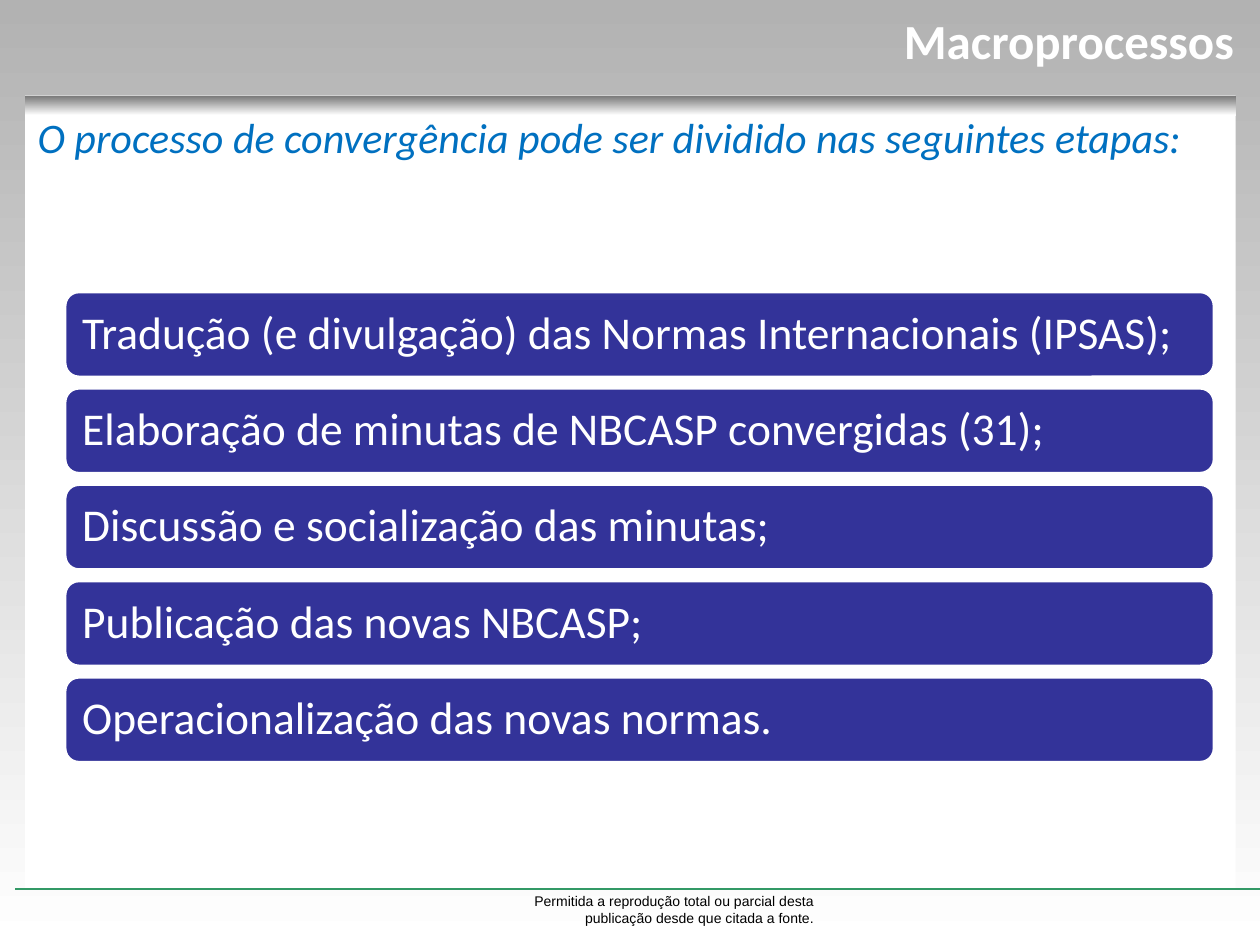
from lxml import etree
from pptx import Presentation
from pptx.dml.color import RGBColor
from pptx.enum.shapes import MSO_CONNECTOR, MSO_SHAPE
from pptx.enum.text import MSO_ANCHOR, MSO_AUTO_SIZE, PP_ALIGN
from pptx.oxml.ns import qn
from pptx.util import Pt

RECT, ROUNDED = MSO_SHAPE.RECTANGLE, MSO_SHAPE.ROUNDED_RECTANGLE
LEFT, RIGHT = PP_ALIGN.LEFT, PP_ALIGN.RIGHT
TOP, MIDDLE = MSO_ANCHOR.TOP, MSO_ANCHOR.MIDDLE

TITLE = "Macroprocessos"
LEAD = "O processo de convergência pode ser dividido nas seguintes etapas:"
STEPS = [
    "Tradução (e divulgação) das Normas Internacionais (IPSAS);",
    "Elaboração de minutas de NBCASP convergidas (31);",
    "Discussão e socialização das minutas;",
    "Publicação das novas NBCASP;",
    "Operacionalização das novas normas.",
]
FOOTER = "Permitida a reprodução total ou parcial desta publicação desde que citada a fonte."

COLORS = {
    "white": "FFFFFF", "black": "000000", "backdrop": "B2B2B2", "shade": "767676",
    "rule": "339966", "lead": "0070C0", "step": "333399",
}
SLIDE_W, SLIDE_H = 720, 540
PANEL_X, PANEL_Y, PANEL_W = 14.4, 54.6, 691.7
RULE_Y = 508
STEP_X, STEP_Y, STEP_W, STEP_H, STEP_PITCH = 37, 166.6, 657, 49, 55.05


def rgb(name):
    return RGBColor.from_string(COLORS[name])


def points(*lengths):
    return [Pt(length) for length in lengths]


def add_block(slide, kind, box, fill, fade_to=None):
    """Add a borderless shape, solid or fading downwards to a second colour."""
    block = slide.shapes.add_shape(kind, *points(*box))
    block.shadow.inherit = False
    block.line.fill.background()
    if fade_to:
        block.fill.gradient()
        block.fill.gradient_angle = 270
        for stop, color in zip(block.fill.gradient_stops, (fill, fade_to)):
            stop.color.rgb = rgb(color)
    else:
        block.fill.solid()
        block.fill.fore_color.rgb = rgb(fill)
    return block


def write(holder, text, size, color, font="Calibri", bold=False, italic=False,
          align=LEFT, anchor=TOP, spacing=1.0, after=0, margin_x=7.2, margin_y=3.6):
    frame = holder.text_frame
    frame.word_wrap = True
    frame.auto_size = MSO_AUTO_SIZE.NONE
    frame.vertical_anchor = anchor
    frame.margin_left = frame.margin_right = Pt(margin_x)
    frame.margin_top = frame.margin_bottom = Pt(margin_y)
    frame.text = text
    paragraph = frame.paragraphs[0]
    paragraph.alignment = align
    paragraph.line_spacing = spacing
    paragraph.space_before, paragraph.space_after = Pt(0), Pt(after)
    style = paragraph.font
    style.name, style.size, style.bold, style.italic = font, Pt(size), bold, italic
    style.color.rgb = rgb(color)


def add_backdrop(slide):
    add_block(slide, RECT, (0, 0, SLIDE_W, SLIDE_H), "backdrop", "white")
    add_block(slide, RECT, (PANEL_X, PANEL_Y, PANEL_W, RULE_Y - PANEL_Y), "white")
    add_block(slide, RECT, (PANEL_X, PANEL_Y, PANEL_W, 11.3), "shade", "white")
    rule = slide.shapes.add_connector(
        MSO_CONNECTOR.STRAIGHT, *points(8.6, RULE_Y, SLIDE_W, RULE_Y))
    rule.line.color.rgb = rgb("rule")
    rule.line.width = Pt(0.75)
    etree.SubElement(rule._element.spPr, qn("a:effectLst"))


def main():
    deck = Presentation()
    deck.slide_width, deck.slide_height = points(SLIDE_W, SLIDE_H)
    slide = deck.slides.add_slide(deck.slide_layouts[5])
    add_backdrop(slide)

    footer = slide.shapes.add_textbox(*points(298, 506.4, 174.4, 26.7))
    write(footer, FOOTER, 8, "black", font="Arial", align=RIGHT)
    lead = slide.shapes.add_textbox(*points(PANEL_X, PANEL_Y, PANEL_W, 42.5))
    write(lead, LEAD, 24, "lead", italic=True, spacing=1.2, after=6)

    title = slide.shapes.title
    title.left, title.top, title.width, title.height = points(47.5, 0, 664, 45.4)
    write(title, TITLE, 28, "white", bold=True, align=RIGHT, anchor=MIDDLE,
          margin_x=6.5, margin_y=2.9)
    slide.shapes._spTree.append(title._element)  # bring in front of the backdrop

    for row, text in enumerate(STEPS):
        step = add_block(slide, ROUNDED,
                         (STEP_X, STEP_Y + row * STEP_PITCH, STEP_W, STEP_H), "step")
        step.line.color.rgb = rgb("white")
        step.line.width = Pt(2)
        write(step, text, 26, "white", anchor=MIDDLE, spacing=0.9, margin_x=7.6)

    deck.save("out.pptx")


if __name__ == "__main__":
    main()
